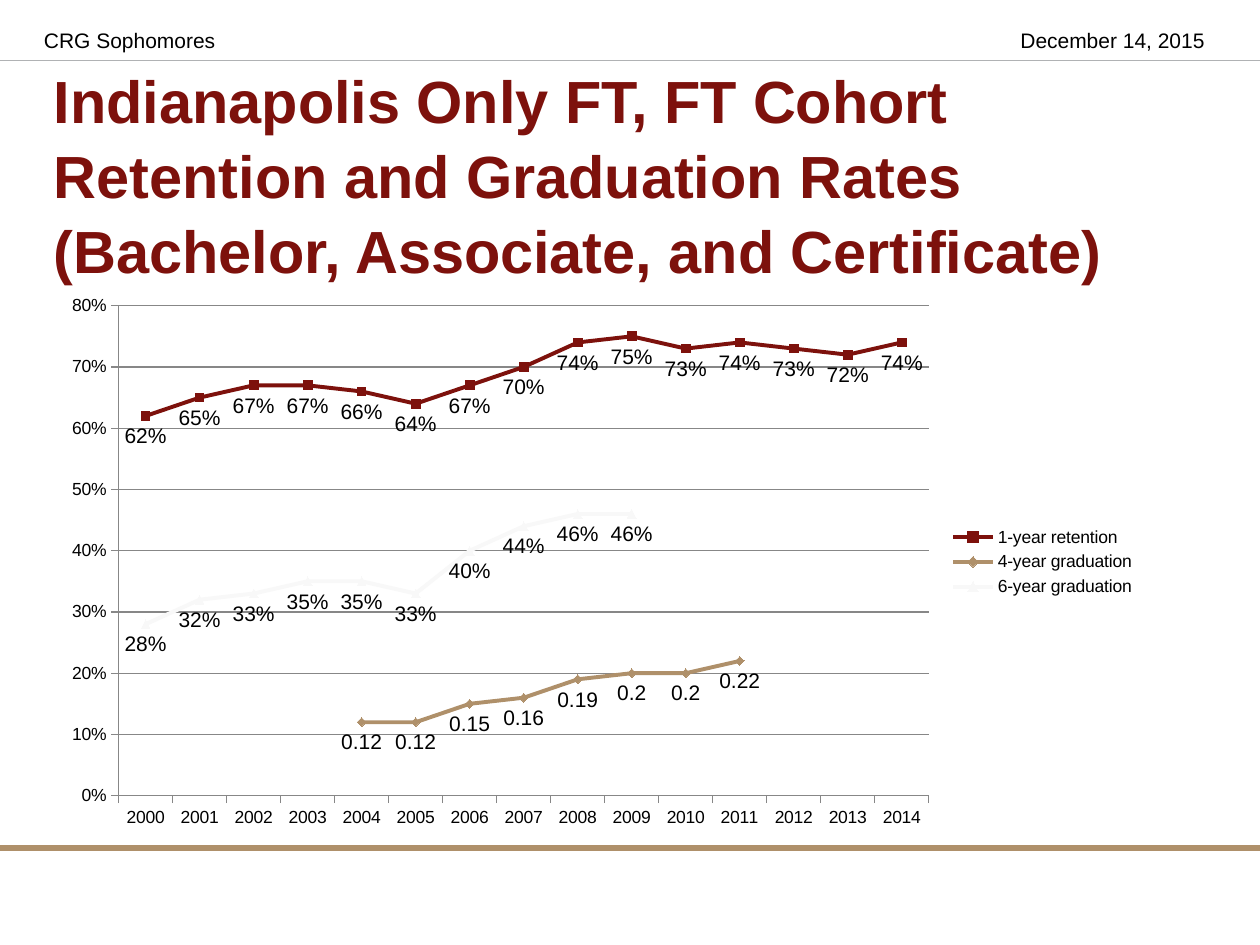
"""Build the retention and graduation rates slide."""
from lxml.etree import SubElement, fromstring
from pptx import Presentation
from pptx.chart.data import CategoryChartData
from pptx.dml.color import RGBColor
from pptx.enum.chart import (XL_CHART_TYPE, XL_LABEL_POSITION, XL_LEGEND_POSITION,
                             XL_MARKER_STYLE, XL_TICK_MARK)
from pptx.enum.text import MSO_ANCHOR
from pptx.oxml.ns import qn
from pptx.util import Inches, Pt

RED, TAN, PALE, GRAY, BLACK = "7D110C", "AF906A", "F8F8F8", "878787", "000000"
W, H = 10, 7.5
RULES = [(0.48, "B0B2B4", 0.75), (6.73, TAN, 3.75)]
TEXTS = [
    ("Indianapolis Only FT, FT Cohort Retention and Graduation Rates "
     "(Bachelor, Associate, and Certificate)", (0.33, 0.75, 9.03, 1.25),
     dict(size=Pt(34), bold=True), RED, MSO_ANCHOR.MIDDLE, 1.05),
    ("December 14, 2015", (8, 0.17, 1.75, 0.33),
     dict(size=Pt(12)), BLACK, MSO_ANCHOR.TOP, 1),
    ("CRG Sophomores", (0.25, 0.17, 5.42, 0.33),
     dict(size=Pt(12)), BLACK, MSO_ANCHOR.TOP, 1),
]
YEARS = range(2000, 2015)
CHART_BOX = (0.42, 2.25, 8.69, 4.42)
PLOT = dict(x=0.06, y=0.04, w=0.74, h=0.88)
SERIES = [
    ("1-year retention", 2000, [62, 65, 67, 67, 66, 64, 67, 70, 74, 75, 73, 74, 73, 72, 74],
     RED, XL_MARKER_STYLE.SQUARE, "0%"),
    ("4-year graduation", 2004, [12, 12, 15, 16, 19, 20, 20, 22],
     TAN, XL_MARKER_STYLE.DIAMOND, "General"),
    ("6-year graduation", 2000, [28, 32, 33, 35, 35, 33, 40, 44, 46, 46],
     PALE, XL_MARKER_STYLE.TRIANGLE, "0%"),
]


def rgb(value):
    """Return a colour from a hex string."""
    return RGBColor.from_string(value)


def style(obj, **values):
    """Set attributes on an object."""
    for name, value in values.items():
        setattr(obj, name, value)


def set_font(font, color, **values):
    """Apply the slide's font with a colour and format values."""
    style(font, name="Arial", **values)
    font.color.rgb = rgb(color)


def set_line(line, color, width):
    """Set the colour and width of a line in points."""
    line.color.rgb = rgb(color)
    line.width = Pt(width)


def add_rule(s, y, color, width):
    """Draw a rule across the slide."""
    sp = s.shapes.add_connector(1, 0, Inches(y), Inches(W), Inches(y))
    set_line(sp.line, color, width)
    SubElement(sp._element.spPr, qn("a:effectLst"))


def add_text(s, text, box, fmt, color, anchor, spacing):
    """Add a wrapped text box."""
    tf = s.shapes.add_textbox(*map(Inches, box)).text_frame
    style(tf, word_wrap=True, vertical_anchor=anchor)
    p = tf.paragraphs[0]
    p.line_spacing = spacing
    r = p.add_run()
    r.text = text
    set_font(r.font, color, **fmt)


def place_plot(chart):
    """Fix the inner plot area at shares of the chart's size."""
    plot = chart._chartSpace.chart.plotArea
    for old in plot.findall(qn("c:layout")):
        plot.remove(old)
    sizes = "".join(f'<c:{k} val="{v}"/>' for k, v in PLOT.items())
    plot.insert(0, fromstring(
        '<c:layout xmlns:c="http://schemas.openxmlformats.org/drawingml/2006/chart">'
        '<c:manualLayout><c:layoutTarget val="inner"/><c:xMode val="edge"/>'
        f'<c:yMode val="edge"/>{sizes}</c:manualLayout></c:layout>'))


def style_series(ser, color, marker, number_format):
    """Format one line with its markers and value labels."""
    ser.smooth = False
    set_line(ser.format.line, color, 2.25)
    style(ser.marker, style=marker, size=5)
    ser.marker.format.fill.solid()
    ser.marker.format.fill.fore_color.rgb = rgb(color)
    set_line(ser.marker.format.line, color, 0.75)
    labels = ser.data_labels
    style(labels, show_value=True, position=XL_LABEL_POSITION.BELOW,
          number_format=number_format, number_format_is_linked=False)
    set_font(labels.font, BLACK, size=Pt(12))


def add_rates(s):
    """Add the line chart of rates by cohort year."""
    data = CategoryChartData()
    data.categories = [str(year) for year in YEARS]
    for name, first, rates, *_ in SERIES:
        known = {first + i: rate / 100 for i, rate in enumerate(rates)}
        data.add_series(name, [known.get(year) for year in YEARS])
    chart = s.shapes.add_chart(XL_CHART_TYPE.LINE_MARKERS, *map(Inches, CHART_BOX), data).chart
    style(chart, has_title=False, has_legend=True)
    style(chart.legend, position=XL_LEGEND_POSITION.RIGHT, include_in_layout=False)
    set_font(chart.font, BLACK, size=Pt(10))
    chart.plots[0].vary_by_categories = False
    place_plot(chart)
    for axis in (chart.category_axis, chart.value_axis):
        axis.major_tick_mark = XL_TICK_MARK.OUTSIDE
        set_line(axis.format.line, GRAY, 0.75)
    axis = chart.value_axis
    style(axis, minimum_scale=0, maximum_scale=0.8, major_unit=0.1, has_major_gridlines=True)
    style(axis.tick_labels, number_format="0%", number_format_is_linked=False)
    set_line(axis.major_gridlines.format.line, GRAY, 0.75)
    for ser, (*_, color, marker, number_format) in zip(chart.plots[0].series, SERIES):
        style_series(ser, color, marker, number_format)


def main():
    """Build and save the slide."""
    prs = Presentation()
    style(prs, slide_width=Inches(W), slide_height=Inches(H))
    s = prs.slides.add_slide(prs.slide_layouts[6])
    for rule in RULES:
        add_rule(s, *rule)
    for text in TEXTS:
        add_text(s, *text)
    add_rates(s)
    prs.save("out.pptx")


if __name__ == "__main__":
    main()
